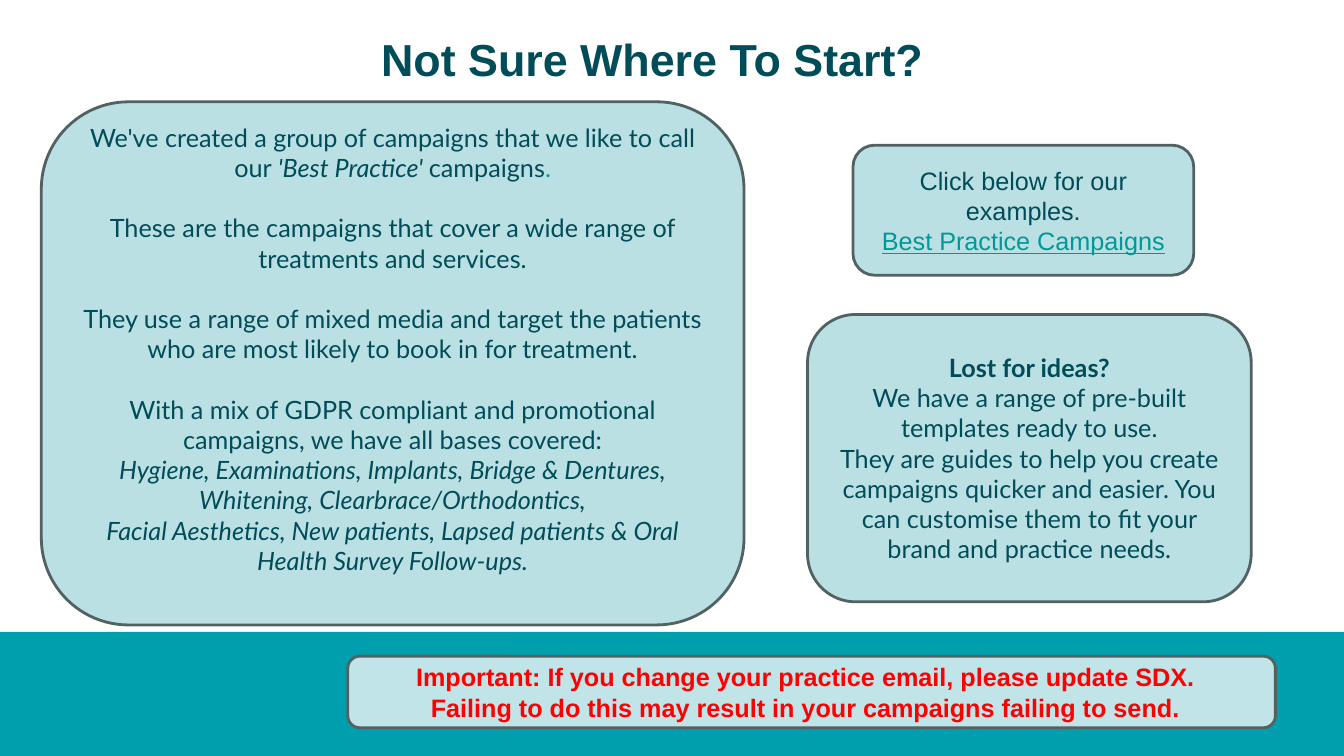
from dataclasses import dataclass, field

from pptx import Presentation
from pptx.dml.color import RGBColor
from pptx.enum.shapes import MSO_SHAPE
from pptx.enum.text import MSO_ANCHOR, MSO_AUTO_SIZE, PP_ALIGN
from pptx.slide import Slide
from pptx.text.text import TextFrame, _Paragraph
from pptx.util import Inches, Pt


@dataclass(frozen=True)
class Theme:
    ink: str = "004C59"
    teal: str = "009FAE"
    accent: str = "009EAD"
    link: str = "009999"
    warning: str = "FF0000"
    card: str = "BBE0E3"
    notice: str = "C1E4E8"
    outline: str = "526263"
    sans: str = "Arial"
    body: str = "Lato"
    title_size: float = 32
    text_size: float = 18
    outline_width: float = 2
    gap: float = 21.6


THEME = Theme()


@dataclass(frozen=True)
class Span:
    text: str
    color: str = THEME.ink
    bold: bool = False
    italic: bool = False
    underline: bool = False


@dataclass(frozen=True)
class Line:
    spans: list[Span]
    gap: bool = False


@dataclass(frozen=True)
class Card:
    left: float
    top: float
    width: float
    height: float
    lines: list[Line] = field(default_factory=list)
    font: str = THEME.body
    fill: str = THEME.card
    right_inset: float = 0.1
    bottom_inset: float = 0.05


def add_span(paragraph: _Paragraph, span: Span, font: str, size: float) -> None:
    run = paragraph.add_run()
    run.text = span.text
    run.font.name = font
    run.font.size = Pt(size)
    run.font.bold = span.bold
    run.font.italic = span.italic
    run.font.underline = span.underline
    run.font.color.rgb = RGBColor.from_string(span.color)


def write_lines(frame: TextFrame, lines: list[Line], font: str) -> None:
    for index, line in enumerate(lines):
        paragraph = frame.add_paragraph() if index else frame.paragraphs[0]
        paragraph.alignment = PP_ALIGN.CENTER
        if line.gap:
            paragraph.space_before = Pt(THEME.gap)
        for span in line.spans:
            add_span(paragraph, span, font, THEME.text_size)


def draw_card(slide: Slide, card: Card) -> None:
    panel = slide.shapes.add_shape(
        MSO_SHAPE.ROUNDED_RECTANGLE,
        Inches(card.left), Inches(card.top), Inches(card.width), Inches(card.height),
    )
    panel.shadow.inherit = False
    panel.fill.solid()
    panel.fill.fore_color.rgb = RGBColor.from_string(card.fill)
    panel.line.color.rgb = RGBColor.from_string(THEME.outline)
    panel.line.width = Pt(THEME.outline_width)
    frame = panel.text_frame
    frame.word_wrap = True
    frame.vertical_anchor = MSO_ANCHOR.MIDDLE
    frame.margin_right = Inches(card.right_inset)
    frame.margin_bottom = Inches(card.bottom_inset)
    write_lines(frame, card.lines, card.font)


def draw_band(slide: Slide) -> None:
    band = slide.shapes.add_shape(
        MSO_SHAPE.RECTANGLE, Inches(0), Inches(6.27), Inches(13.33), Inches(1.23)
    )
    band.shadow.inherit = False
    band.fill.solid()
    band.fill.fore_color.rgb = RGBColor.from_string(THEME.teal)
    band.line.fill.background()


def write_title(slide: Slide, text: str) -> None:
    title = slide.shapes.title
    title.left, title.top = Inches(3.68), Inches(0.26)
    title.width, title.height = Inches(5.62), Inches(0.64)
    frame = title.text_frame
    frame.auto_size = MSO_AUTO_SIZE.NONE
    frame.word_wrap = False
    frame.vertical_anchor = MSO_ANCHOR.MIDDLE
    heading = frame.paragraphs[0]
    heading.alignment = PP_ALIGN.LEFT
    add_span(heading, Span(text, bold=True), THEME.sans, THEME.title_size)


BEST_PRACTICE = Card(0.41, 1.01, 6.97, 5.19, bottom_inset=0.34, lines=[
    Line([
        Span("We've created a group of campaigns that we like to call our "),
        Span("'Best Practice' ", italic=True),
        Span("campaigns"),
        Span(".", color=THEME.accent),
    ]),
    Line([Span("These are the campaigns that cover a wide range of "
               "treatments and services.")], gap=True),
    Line([Span("They use a range of mixed media and target the patients "
               "who are most likely to book in for treatment.")], gap=True),
    Line([Span("With a mix of GDPR compliant and promotional campaigns, "
               "we have all bases covered:")], gap=True),
    Line([Span("Hygiene, Examinations, Implants, Bridge & Dentures, "
               "Whitening, Clearbrace/Orthodontics,", italic=True)]),
    Line([Span("Facial Aesthetics, New patients, Lapsed patients & Oral "
               "Health Survey Follow-ups.", italic=True)]),
])

IDEAS = Card(8.01, 3.12, 4.4, 2.85, lines=[
    Line([Span("Lost for ideas?", bold=True)]),
    Line([Span("We have a range of pre-built templates ready to use.")]),
    Line([Span("They are guides to help you create campaigns quicker and easier. "
               "You can customise them to fit your brand and practice needs.")]),
])

EXAMPLES = Card(8.46, 1.44, 3.38, 1.29, font=THEME.sans, lines=[
    Line([Span("Click below for our examples.")]),
    Line([Span("Best Practice Campaigns", color=THEME.link, underline=True)]),
])

NOTICE = Card(
    3.45, 6.51, 9.2, 0.71, font=THEME.sans, fill=THEME.notice, right_inset=0.22,
    lines=[
        Line([Span(sentence, color=THEME.warning, bold=True)])
        for sentence in (
            "Important: If you change your practice email, please update SDX.",
            "Failing to do this may result in your campaigns failing to send.",
        )
    ],
)


def main() -> None:
    deck = Presentation()
    deck.slide_width, deck.slide_height = Inches(13.33), Inches(7.5)
    slide = deck.slides.add_slide(deck.slide_layouts.get_by_name("Title Only"))

    # Footer band and heading
    draw_band(slide)
    write_title(slide, "Not Sure Where To Start?")

    # Message cards
    for card in (BEST_PRACTICE, IDEAS, EXAMPLES, NOTICE):
        draw_card(slide, card)

    deck.save("out.pptx")


if __name__ == "__main__":
    main()
